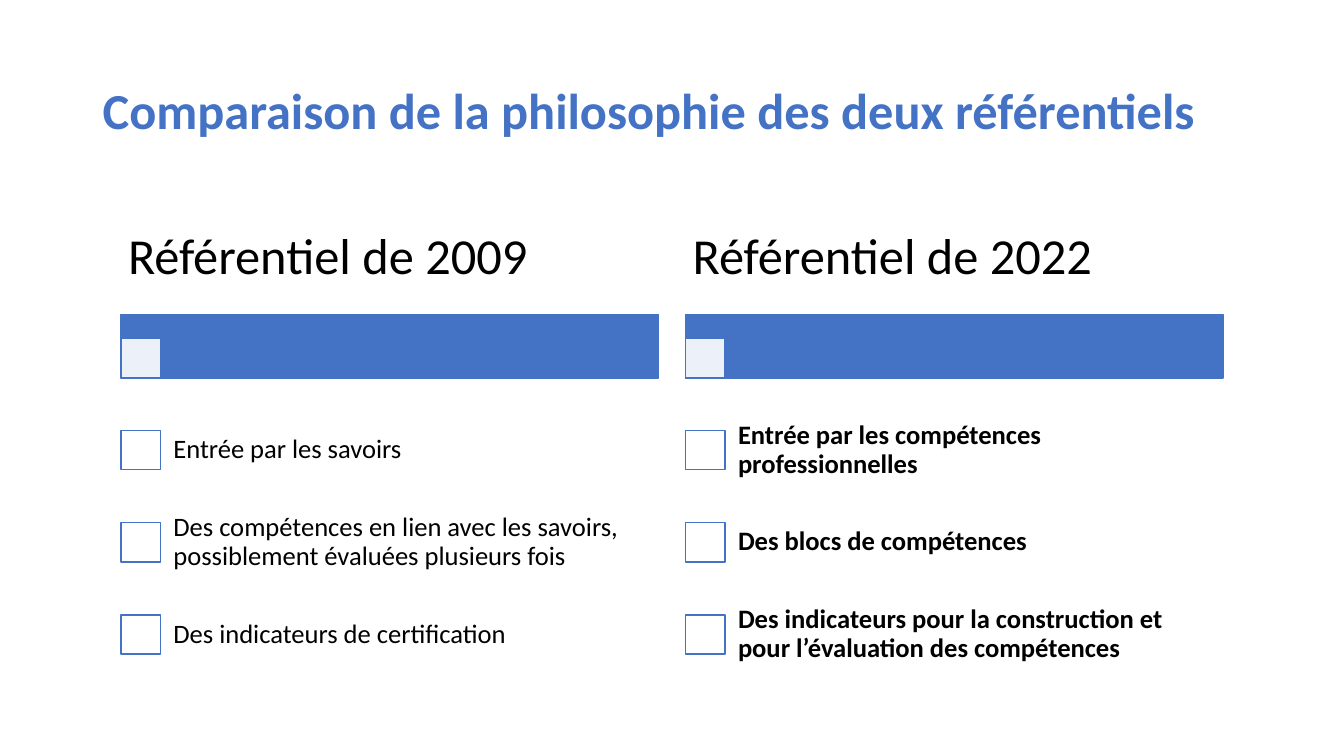
from lxml import etree
from pptx import Presentation
from pptx.dml.color import RGBColor
from pptx.enum.shapes import MSO_SHAPE
from pptx.enum.text import MSO_ANCHOR
from pptx.oxml.ns import qn
from pptx.util import Inches, Pt

RECTANGLE = MSO_SHAPE.RECTANGLE
MIDDLE = MSO_ANCHOR.MIDDLE

FONT = "Calibri"
BLUE = "4472C4"
WHITE = "FFFFFF"
BLACK = "000000"

TITLE = "Comparaison de la philosophie des deux référentiels"
COLUMNS = [
    ("Référentiel de 2009", False, [
        "Entrée par les savoirs",
        "Des compétences en lien avec les savoirs, possiblement évaluées plusieurs fois",
        "Des indicateurs de certification",
    ]),
    ("Référentiel de 2022", True, [
        "Entrée par les compétences professionnelles",
        "Des blocs de compétences",
        "Des indicateurs pour la construction et pour l’évaluation des compétences",
    ]),
]
COLUMN_LEFT = 1.2
COLUMN_STEP = 5.6
COLUMN_WIDTH = 5.33
BOX_SIZE = 0.39
ITEM_TOP = 4.01
ITEM_STEP = 0.915
ITEM_HEIGHT = 0.91
ITEM_INDENT = 0.37


def color(value):
    """Return the colour for a hex string."""
    return RGBColor.from_string(value)


def add_text(slide, text, left, top, width, height, size,
             text_color=BLACK, bold=False, margins=(0.1, 0.05)):
    """Add a wrapped, vertically centred text box."""
    frame = slide.shapes.add_textbox(
        Inches(left), Inches(top), Inches(width), Inches(height)).text_frame
    frame.word_wrap = True
    frame.vertical_anchor = MIDDLE
    frame.margin_left = frame.margin_right = Inches(margins[0])
    frame.margin_top = frame.margin_bottom = Inches(margins[1])
    frame.text = text
    paragraph = frame.paragraphs[0]
    paragraph.line_spacing = 0.9
    font = paragraph.runs[0].font
    font.name = FONT
    font.size = Pt(size)
    font.bold = bold
    font.color.rgb = color(text_color)


def add_rectangle(slide, left, top, width, height, fill, opacity=100):
    """Add a blue-outlined rectangle, optionally translucent."""
    shape = slide.shapes.add_shape(
        RECTANGLE, Inches(left), Inches(top), Inches(width), Inches(height))
    shape.shadow.inherit = False
    shape.fill.solid()
    shape.fill.fore_color.rgb = color(fill)
    shape.line.color.rgb = color(BLUE)
    shape.line.width = Pt(1)
    if opacity < 100:
        fill_color = shape.fill._xPr.find(qn("a:solidFill"))[0]
        etree.SubElement(fill_color, qn("a:alpha"), val=str(opacity * 1000))


def add_item(slide, text, left, top, bold):
    """Add a checkbox with its statement."""
    add_rectangle(slide, left, top + 0.26, BOX_SIZE, BOX_SIZE, WHITE)
    add_text(slide, text, left + ITEM_INDENT, top, COLUMN_WIDTH - ITEM_INDENT,
             ITEM_HEIGHT, 19, bold=bold, margins=(0.15, 0.15))


def add_column(slide, left, heading, bold, items):
    """Add a heading, its bar and its list of statements."""
    add_rectangle(slide, left, 3.12, COLUMN_WIDTH, 0.63, BLUE)
    add_rectangle(slide, left, 3.36, BOX_SIZE, BOX_SIZE, WHITE, opacity=90)
    add_text(slide, heading, left, 2, COLUMN_WIDTH, 1.13, 36, margins=(0.07, 0.05))
    for row, item in enumerate(items):
        add_item(slide, item, left, ITEM_TOP + row * ITEM_STEP, bold)


def main():
    """Build and save the comparison slide."""
    presentation = Presentation()
    presentation.slide_width = Inches(13.33)
    presentation.slide_height = Inches(7.5)
    slide = presentation.slides.add_slide(presentation.slide_layouts[6])
    add_text(slide, TITLE, 0.92, 0.4, 11.5, 1.45, 36, BLUE, bold=True)
    for index, (heading, bold, items) in enumerate(COLUMNS):
        add_column(slide, COLUMN_LEFT + index * COLUMN_STEP, heading, bold, items)
    presentation.save("out.pptx")


if __name__ == "__main__":
    main()
